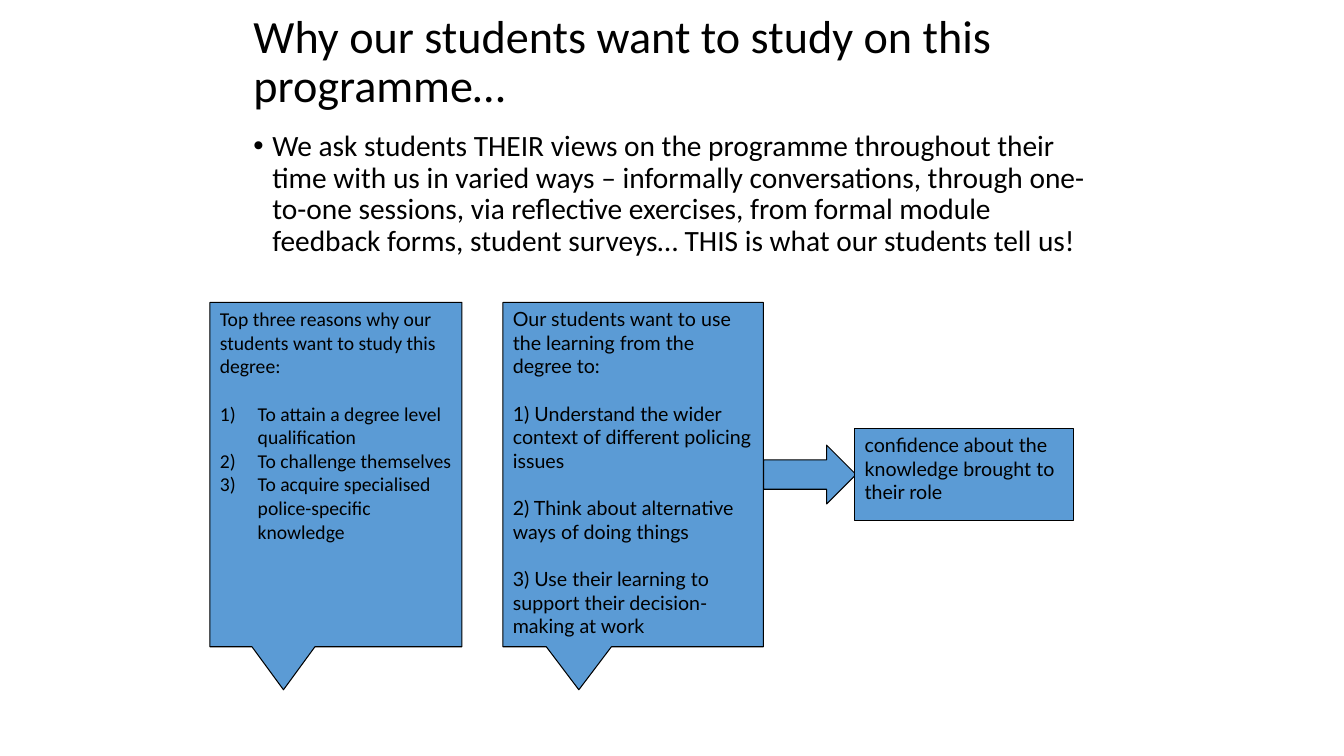
from dataclasses import dataclass
from typing import Optional

from lxml.etree import SubElement
from pptx import Presentation
from pptx.dml.color import RGBColor
from pptx.enum.shapes import MSO_SHAPE
from pptx.enum.text import MSO_ANCHOR, PP_ALIGN
from pptx.oxml.ns import qn
from pptx.slide import Slide
from pptx.text.text import TextFrame
from pptx.util import Pt


@dataclass(frozen=True)
class Theme:
    ink: RGBColor = RGBColor(0x00, 0x00, 0x00)
    panel: RGBColor = RGBColor(0x5B, 0x9B, 0xD5)
    main_font: str = "Calibri"
    panel_font: str = "Lato"
    title_size: float = 33
    body_size: float = 21
    panel_size: float = 14
    outline: float = 0.75
    line_gap: float = 17  # height of one line of panel text


THEME = Theme()


@dataclass(frozen=True)
class Box:
    left: float
    top: float
    width: float
    height: float

    def lengths(self) -> tuple[Pt, Pt, Pt, Pt]:
        return Pt(self.left), Pt(self.top), Pt(self.width), Pt(self.height)


@dataclass(frozen=True)
class Line:
    text: str
    before: float = 0
    bullet: Optional[str] = None  # a character, or "auto" for 1) 2) 3)
    indent: float = 0


@dataclass(frozen=True)
class Panel:
    kind: MSO_SHAPE
    box: Box
    lines: tuple[Line, ...] = ()
    font: str = THEME.panel_font


def write(frame: TextFrame, lines: tuple[Line, ...], *, size: float, font: str,
          anchor: MSO_ANCHOR = MSO_ANCHOR.TOP, spacing: float = 1.0) -> None:
    """Fill a frame with formatted paragraphs."""
    frame.word_wrap = True
    frame.vertical_anchor = anchor
    for index, line in enumerate(lines):
        paragraph = frame.add_paragraph() if index else frame.paragraphs[0]
        if line.bullet:
            properties = paragraph._p.get_or_add_pPr()
            properties.set("marL", str(Pt(line.indent)))
            properties.set("indent", str(-Pt(line.indent)))
            if line.bullet == "auto":
                SubElement(properties, qn("a:buAutoNum"), type="arabicParenR")
            else:
                SubElement(properties, qn("a:buFont"), typeface="Arial")
                SubElement(properties, qn("a:buChar"), char=line.bullet)
        paragraph.alignment = PP_ALIGN.LEFT
        paragraph.line_spacing = spacing
        if line.before:
            paragraph.space_before = Pt(line.before)
        run = paragraph.add_run()
        run.text = line.text
        run.font.size = Pt(size)
        run.font.name = font
        run.font.color.rgb = THEME.ink


def draw_panel(slide: Slide, panel: Panel) -> None:
    """Draw one filled and outlined shape with its text."""
    shape = slide.shapes.add_shape(panel.kind, *panel.box.lengths())
    shape.shadow.inherit = False
    shape.fill.solid()
    shape.fill.fore_color.rgb = THEME.panel
    shape.line.color.rgb = THEME.ink
    shape.line.width = Pt(THEME.outline)
    write(shape.text_frame, panel.lines, size=THEME.panel_size, font=panel.font)


# Heading and introduction
TITLE_BOX = Box(174, 0, 612, 90)
INTRO_BOX = Box(174, 90, 612, 390)
TITLE = (Line("Why our students want to study on this programme…"),)
INTRO = (Line(
    "We ask students THEIR views on the programme throughout their time with us "
    "in varied ways – informally conversations, through one-to-one sessions, via "
    "reflective exercises, from formal module feedback forms, student surveys… "
    "THIS is what our students tell us!", bullet="•", indent=13.5),)

# Reasons for study, uses of learning, and the result
REASONS = (
    "To attain a degree level qualification",
    "To challenge themselves",
    "To acquire specialised police-specific knowledge",
)
USES = (
    "1) Understand the wider context of different policing issues",
    "2) Think about alternative ways of doing things",
    "3) Use their learning to support their decision-making at work",
)
PANELS = (
    Panel(
        MSO_SHAPE.RECTANGULAR_CALLOUT, Box(150, 216, 180, 246),
        (Line("Top three reasons why our students want to study this degree:"),
         *(Line(reason, 0 if index else THEME.line_gap, "auto", 27)
           for index, reason in enumerate(REASONS))),
        THEME.main_font),
    Panel(
        MSO_SHAPE.RECTANGULAR_CALLOUT, Box(359.25, 216, 186, 246),
        (Line("Our students want to use the learning from the degree to:"),
         *(Line(use, THEME.line_gap) for use in USES))),
    Panel(MSO_SHAPE.RIGHT_ARROW, Box(545.5, 318, 66, 42)),
    Panel(
        MSO_SHAPE.RECTANGLE, Box(610.5, 306, 156, 66),
        (Line("confidence about the knowledge brought to their role"),)),
)


def main() -> None:
    deck = Presentation()
    deck.slide_width, deck.slide_height = Pt(960), Pt(540)
    slide = deck.slides.add_slide(deck.slide_layouts[6])

    title = slide.shapes.add_textbox(*TITLE_BOX.lengths())
    write(title.text_frame, TITLE, size=THEME.title_size, font=THEME.main_font,
          anchor=MSO_ANCHOR.MIDDLE, spacing=0.9)
    intro = slide.shapes.add_textbox(*INTRO_BOX.lengths())
    write(intro.text_frame, INTRO, size=THEME.body_size, font=THEME.main_font,
          spacing=0.9)

    for panel in PANELS:
        draw_panel(slide, panel)

    deck.save("out.pptx")


if __name__ == "__main__":
    main()
